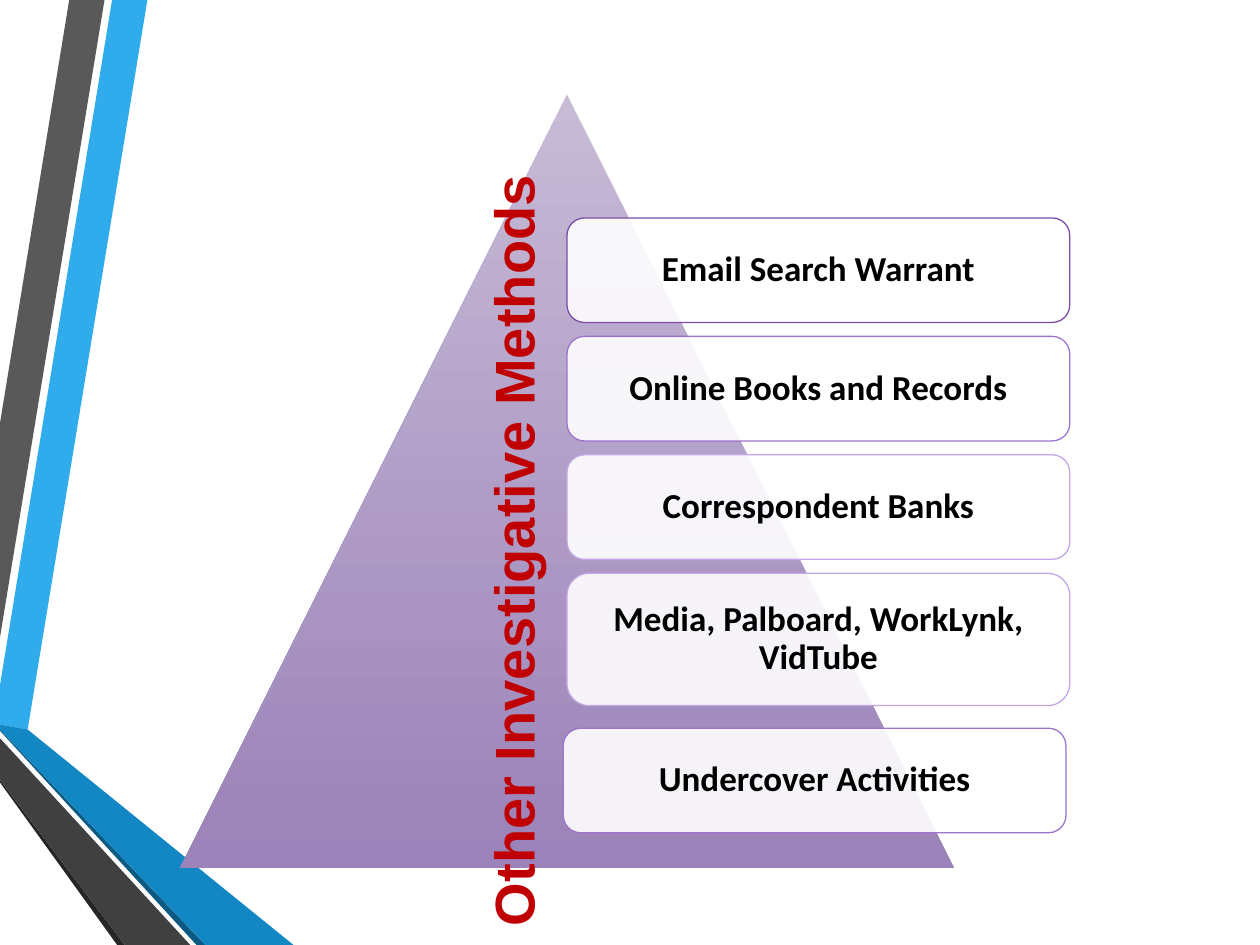
from dataclasses import dataclass

import pptx
import pptx.dml.color
import pptx.enum.shapes
import pptx.enum.text
import pptx.oxml
import pptx.oxml.ns
import pptx.util
from pptx.util import Inches

SHAPES = pptx.enum.shapes.MSO_SHAPE


@dataclass
class Ribbon:
    color: str
    points: list[tuple[float, float]]


@dataclass
class Method:
    label: str
    line_color: str
    top: float
    left: float = 4.5
    height: float = 0.83


RIBBONS = [
    Ribbon("30ACEC", [(0, 5.44), (0, 5.75), (0.22, 5.79), (1.17, 0), (0.89, 0)]),
    Ribbon("595959", [(0.83, 0), (0.55, 0), (0, 3.36), (0, 5.06)]),
    Ribbon("262626", [(0, 6.19), (0, 6.21), (0.93, 7.5), (0.99, 7.5)]),
    Ribbon("0C5A82", [(0, 5.79), (0, 5.8), (1.56, 7.5), (1.63, 7.5)]),
    Ribbon("1287C3", [(0, 5.79), (1.63, 7.5), (2.33, 7.5), (0.22, 5.79), (0, 5.75)]),
    Ribbon("404040", [(0, 6.19), (0.99, 7.5), (1.51, 7.5), (0, 5.86)]),
]

FIRST_TOP = 1.73
PITCH = 0.94
METHODS = [
    Method("Email Search Warrant", "7B4BA6", FIRST_TOP),
    Method("Online Books and Records", "9E73CC", FIRST_TOP + PITCH),
    Method("Correspondent Banks", "C3A7E5", FIRST_TOP + 2 * PITCH),
    Method("Media, Palboard, WorkLynk, VidTube", "C3A7E5", FIRST_TOP + 3 * PITCH, height=1.05),
    Method("Undercover Activities", "9E73CC", 5.78, left=4.47),
]


def rgb(color: str) -> pptx.dml.color.RGBColor:
    return pptx.dml.color.RGBColor.from_string(color)


def write_text(shape, text: str, *, font: str, size: float, color: str,
               line_spacing: float = 1.0) -> None:
    paragraph = shape.text_frame.paragraphs[0]
    paragraph.alignment = pptx.enum.text.PP_ALIGN.CENTER
    paragraph.line_spacing = line_spacing
    run = paragraph.add_run()
    run.text = text
    run.font.name = font
    run.font.size = pptx.util.Pt(size)
    run.font.bold = True
    run.font.color.rgb = rgb(color)


def set_opacity(shape, percent: int) -> None:
    color = shape.fill._xPr.find(".//" + pptx.oxml.ns.qn("a:srgbClr"))
    alpha = pptx.oxml.parse_xml(f'<a:alpha {pptx.oxml.ns.nsdecls("a")} val="{percent * 1000}"/>')
    color.append(alpha)


def draw_ribbon(slide, ribbon: Ribbon) -> None:
    points = [(Inches(x), Inches(y)) for x, y in ribbon.points]
    builder = slide.shapes.build_freeform(*points[0])
    builder.add_line_segments(points[1:], close=True)
    shape = builder.convert_to_shape()
    shape.shadow.inherit = False
    shape.fill.solid()
    shape.fill.fore_color.rgb = rgb(ribbon.color)
    shape.line.fill.background()


def draw_pyramid(slide) -> None:
    pyramid = slide.shapes.add_shape(
        SHAPES.ISOSCELES_TRIANGLE, Inches(1.43), Inches(0.75), Inches(6.14), Inches(6.14))
    pyramid.shadow.inherit = False
    pyramid.line.fill.background()
    pyramid.fill.gradient()
    pyramid.fill.gradient_angle = 270
    for stop, position, color in zip(pyramid.fill.gradient_stops, (0, 1), ("C7BBD6", "9B82B8")):
        stop.position = position
        stop.color.rgb = rgb(color)


def draw_method(slide, method: Method) -> None:
    box = slide.shapes.add_shape(
        SHAPES.ROUNDED_RECTANGLE, Inches(method.left), Inches(method.top),
        Inches(3.99), Inches(method.height))
    box.shadow.inherit = False
    box.fill.solid()
    box.fill.fore_color.rgb = rgb("FFFFFF")
    set_opacity(box, 90)
    box.line.color.rgb = rgb(method.line_color)
    box.line.width = pptx.util.Pt(0.75)
    frame = box.text_frame
    frame.word_wrap = True
    frame.vertical_anchor = pptx.enum.text.MSO_ANCHOR.MIDDLE
    frame.margin_left = frame.margin_right = Inches(0.08)
    frame.margin_top = frame.margin_bottom = Inches(0.08)
    write_text(box, method.label, font="Calibri", size=20, color="000000", line_spacing=0.9)


def draw_title(slide) -> None:
    title = slide.shapes.add_textbox(Inches(-0.14), Inches(4.05), Inches(8.42), Inches(0.64))
    title.rotation = 270
    title.text_frame.word_wrap = True
    title.text_frame.auto_size = pptx.enum.text.MSO_AUTO_SIZE.SHAPE_TO_FIT_TEXT
    write_text(title, "Other Investigative Methods", font="Arial", size=32, color="C00000")


def main() -> None:
    presentation = pptx.Presentation()
    presentation.slide_width = Inches(10)
    presentation.slide_height = Inches(7.5)
    slide = presentation.slides.add_slide(presentation.slide_layouts[6])
    for ribbon in RIBBONS:
        draw_ribbon(slide, ribbon)
    draw_pyramid(slide)
    for method in METHODS:
        draw_method(slide, method)
    draw_title(slide)
    presentation.save("out.pptx")


if __name__ == "__main__":
    main()
